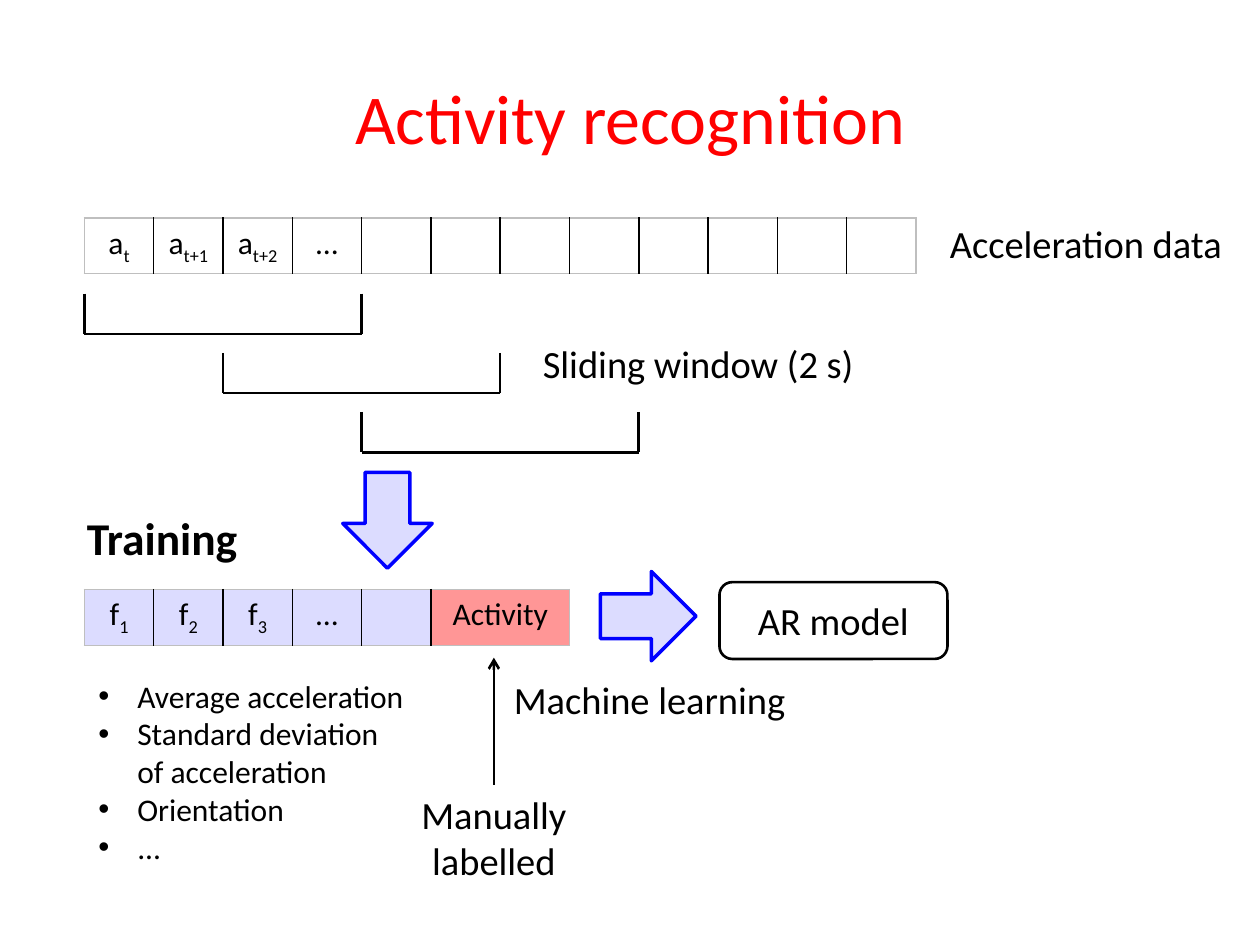
import lxml.etree
import pptx
import pptx.dml.color
import pptx.enum.shapes
import pptx.enum.text
import pptx.oxml
import pptx.oxml.ns
import pptx.util

Inches = pptx.util.Inches
Pt = pptx.util.Pt
SHAPE = pptx.enum.shapes.MSO_SHAPE
ALIGN = pptx.enum.text.PP_ALIGN
ANCHOR = pptx.enum.text.MSO_ANCHOR
AUTO = pptx.enum.text.MSO_AUTO_SIZE
qn = pptx.oxml.ns.qn

FONT = "Calibri"
BLACK, RED, BLUE, LILAC, PINK, GREY = "000000", "FF0000", "0000FF", "DCDCFF", "FF9696", "BFBFBF"
LEFT, COL, ROW = 0.67, 0.55, 0.41


def rgb(color):
    """Turn a hex string into a colour."""
    return pptx.dml.color.RGBColor.from_string(color)


def style(p, size, color=BLACK, align=ALIGN.LEFT, bold=False):
    """Set the font and alignment of a paragraph."""
    p.alignment = align
    p.font.name, p.font.size, p.font.bold = FONT, Pt(size), bold
    p.font.color.rgb = rgb(color)


def place(s, x, y, w, h):
    """Move and size a shape."""
    s.left, s.top, s.width, s.height = (Inches(v) for v in (x, y, w, h))


def add_title(slide, text):
    """Fill the title placeholder."""
    s = slide.shapes.title
    place(s, 0.5, 0.3, 9, 1.25)
    s.text_frame.text = text
    s.text_frame.vertical_anchor = ANCHOR.MIDDLE
    style(s.text_frame.paragraphs[0], 40, RED, ALIGN.CENTER)


def add_list(slide, items, x, y, w, h):
    """Fill the body placeholder with bullets."""
    s = slide.placeholders[1]
    place(s, x, y, w, h)
    tf = s.text_frame
    tf.text = "\n".join(items)
    tf.word_wrap, tf.auto_size = False, AUTO.NONE
    for p in tf.paragraphs:
        style(p, 18)
        p.space_before = Pt(0)
        pPr = p._p.get_or_add_pPr()
        pPr.set("marL", str(Inches(0.31)))
        pPr.set("indent", str(-Inches(0.31)))


def add_label(slide, text, x, y, w, h, size=22, align=ALIGN.LEFT, bold=False):
    """Add an unwrapped text box."""
    s = slide.shapes.add_textbox(Inches(x), Inches(y), Inches(w), Inches(h))
    tf = s.text_frame
    tf.text = text
    tf.word_wrap, tf.auto_size = False, AUTO.SHAPE_TO_FIT_TEXT
    for p in tf.paragraphs:
        style(p, size, align=align, bold=bold)
    return s


def add_line(slide, x1, y1, x2, y2):
    """Add a straight black line."""
    s = slide.shapes.add_connector(
        pptx.enum.shapes.MSO_CONNECTOR.STRAIGHT, Inches(x1), Inches(y1), Inches(x2), Inches(y2))
    s.line.color.rgb = rgb(BLACK)
    s.line.width = Pt(1.5)
    lxml.etree.SubElement(s._element.spPr, qn("a:effectLst"))
    return s


def add_window(slide, x, y, w=4 * COL, h=0.32):
    """Add an open bracket marking one window."""
    add_line(slide, x, y, x, y + h)
    add_line(slide, x + w, y, x + w, y + h)
    add_line(slide, x + w, y + h, x, y + h)


def add_block_arrow(slide, x, y, rotation=0):
    """Add a blue block arrow, pointing down before rotation."""
    s = slide.shapes.add_shape(SHAPE.DOWN_ARROW, Inches(x), Inches(y), Inches(0.71), Inches(0.76))
    s.shadow.inherit = False
    s.rotation = rotation
    s.fill.solid()
    s.fill.fore_color.rgb = rgb(LILAC)
    s.line.color.rgb = rgb(BLUE)
    s.line.width = Pt(2)


def add_box(slide, text, x, y, w, h):
    """Add an outlined rounded box."""
    s = slide.shapes.add_shape(SHAPE.ROUNDED_RECTANGLE, Inches(x), Inches(y), Inches(w), Inches(h))
    s.shadow.inherit = False
    s.fill.background()
    s.line.color.rgb = rgb(BLACK)
    s.line.width = Pt(1.5)
    s.text_frame.text = text
    s.text_frame.vertical_anchor = ANCHOR.MIDDLE
    style(s.text_frame.paragraphs[0], 22, align=ALIGN.CENTER)


def set_border(cell, side, color):
    """Draw one border of a cell."""
    ln = lxml.etree.SubElement(cell._tc.get_or_add_tcPr(), qn("a:ln" + side), w=str(Pt(1)))
    fill = lxml.etree.SubElement(ln, qn("a:solidFill"))
    lxml.etree.SubElement(fill, qn("a:srgbClr"), val=color)


def add_strip(slide, y, cells, widths, fills):
    """Add a one-row table of (text, subscript) cells."""
    count = len(cells)
    frame = slide.shapes.add_table(1, count, Inches(LEFT), Inches(y), Inches(sum(widths)), Inches(ROW))
    table = frame.table
    table.first_row = table.horz_banding = False
    table.rows[0].height = Inches(ROW)
    for i, ((text, sub), width, fill) in enumerate(zip(cells, widths, fills)):
        table.columns[i].width = Inches(width)
        cell = table.cell(0, i)
        set_border(cell, "L", BLACK if i else GREY)
        set_border(cell, "R", BLACK if i < count - 1 else GREY)
        set_border(cell, "T", GREY)
        set_border(cell, "B", GREY)
        if fill:
            cell.fill.solid()
            cell.fill.fore_color.rgb = rgb(fill)
        else:
            cell.fill.background()
        p = cell.text_frame.paragraphs[0]
        style(p, 18, align=ALIGN.CENTER)
        if text:
            p.add_run().text = text
        if sub:
            r = p.add_run()
            r.text = sub
            r._r.get_or_add_rPr().set("baseline", "-25000")


def main():
    """Build the slide."""
    prs = pptx.Presentation()
    prs.slide_width, prs.slide_height = Inches(10), Inches(7.5)
    slide = prs.slides.add_slide(prs.slide_layouts[1])
    add_title(slide, "Activity recognition")

    samples = [("a", "t"), ("a", "t+1"), ("a", "t+2"), ("...", "")] + [("", "")] * 8
    add_strip(slide, 1.73, samples, [COL] * 12, [None] * 12)
    add_label(slide, "Acceleration data", 7.44, 1.7, 2.38, 0.47)
    for i in range(3):
        add_window(slide, LEFT + 2 * COL * i, 2.33 + 0.47 * i)
    add_label(slide, "Sliding window (2 s)", 4.21, 2.65, 2.69, 0.47)
    add_block_arrow(slide, 2.72, 3.75)

    add_label(slide, "Training", 0.59, 4, 1.41, 0.54, size=26, bold=True)
    features = [("f", "1"), ("f", "2"), ("f", "3"), ("...", ""), ("", ""), ("Activity", "")]
    add_strip(slide, 4.68, features, [COL] * 5 + [2 * COL], [LILAC] * 5 + [PINK])
    add_block_arrow(slide, 4.79, 4.51, 270)
    add_label(slide, "Machine learning", 3.98, 5.32, 2.38, 0.47)
    add_box(slide, "AR model", 5.71, 4.62, 1.81, 0.61)
    add_list(slide, ["Average acceleration", "Standard deviation \vof acceleration", "Orientation", "..."],
             0.68, 5.32, 2.66, 1.62)

    manual = add_label(slide, "Manually\nlabelled", 3.24, 6.23, 1.36, 0.84, align=ALIGN.CENTER)
    arrow = add_line(slide, 3.92, 6.23, 3.92, 5.22)
    arrow.begin_connect(manual, 0)
    lxml.etree.SubElement(arrow.line._get_or_add_ln(), qn("a:tailEnd"), type="arrow")
    prs.save("out.pptx")


if __name__ == "__main__":
    main()
